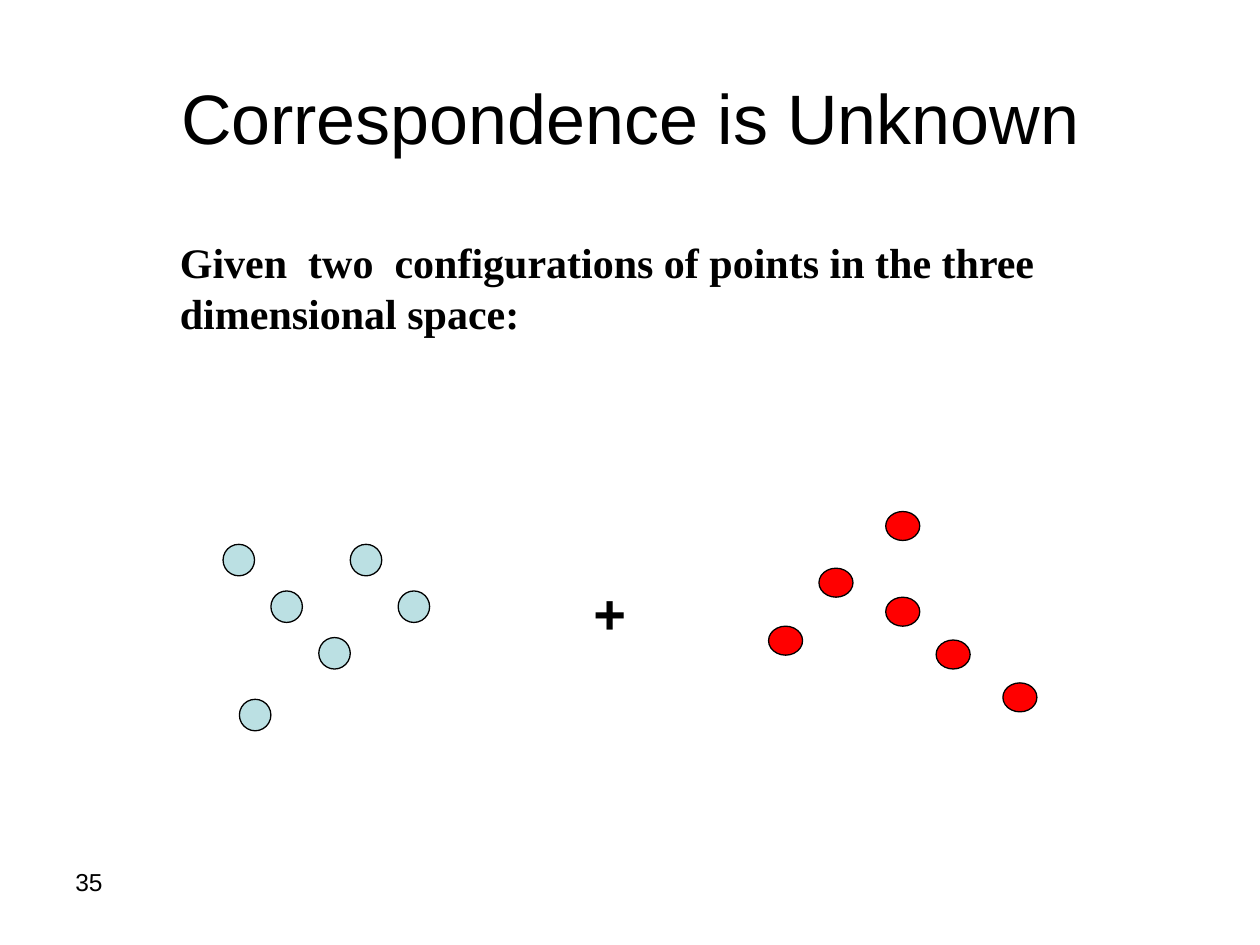
from pptx import Presentation
from pptx import util as u
from pptx.dml.color import RGBColor
from pptx.enum import shapes, text

SCALE = 9144
BLUE_DOTS = [(177, 432), (215, 469), (253, 506), (190, 555), (278, 432), (316, 469)]
RED_DOTS = [(650, 451), (610, 497), (703, 406), (703, 474), (743, 508), (796, 542)]


def px(*vals):
    """Turn lengths in px into EMU."""
    return [u.Emu(val * SCALE) for val in vals]


def color(code):
    """Make a colour from a hex string."""
    return RGBColor.from_string(code)


def label(slide, box, words, size, face="Arial", bold=False, wrap=True,
          align=text.PP_ALIGN.LEFT, anchor=text.MSO_ANCHOR.TOP):
    """Add a text box holding one paragraph."""
    frame = slide.shapes.add_textbox(*px(*box)).text_frame
    frame.word_wrap = wrap
    frame.vertical_anchor = anchor
    para = frame.paragraphs[0]
    para.text = words
    para.alignment = align
    font = para.font
    font.name, font.size, font.bold = face, u.Pt(size), bold
    font.color.rgb = color("000000")


def cloud(slide, spots, wide, high, fill):
    """Add a group of equal outlined dots."""
    group = slide.shapes.add_group_shape()
    for left, top in spots:
        dot = group.shapes.add_shape(shapes.MSO_SHAPE.OVAL, *px(left, top, wide, high))
        dot.shadow.inherit = False
        dot.fill.solid()
        dot.fill.fore_color.rgb = color(fill)
        dot.line.color.rgb = color("000000")
        dot.line.width = u.Pt(0.75)


def main():
    """Build and save the slide."""
    deck = Presentation()
    deck.slide_width, deck.slide_height = px(1000, 750)
    slide = deck.slides.add_slide(deck.slide_layouts[6])
    mid = text.PP_ALIGN.CENTER
    label(slide, (50, 683, 233, 52), "35", 14)
    label(slide, (50, 30, 900, 125), "Correspondence is Unknown", 40,
          align=mid, anchor=text.MSO_ANCHOR.MIDDLE)
    label(slide, (133, 183, 713, 90),
          "Given  two  configurations of points in the three dimensional space:",
          24, "Times New Roman", bold=True)
    cloud(slide, BLUE_DOTS, 25, 25, "BBE0E3")
    cloud(slide, RED_DOTS, 27, 23, "FF0000")
    label(slide, (461, 454, 46, 63), "+", 32, bold=True, wrap=False, align=mid)
    deck.save("out.pptx")


if __name__ == "__main__":
    main()
